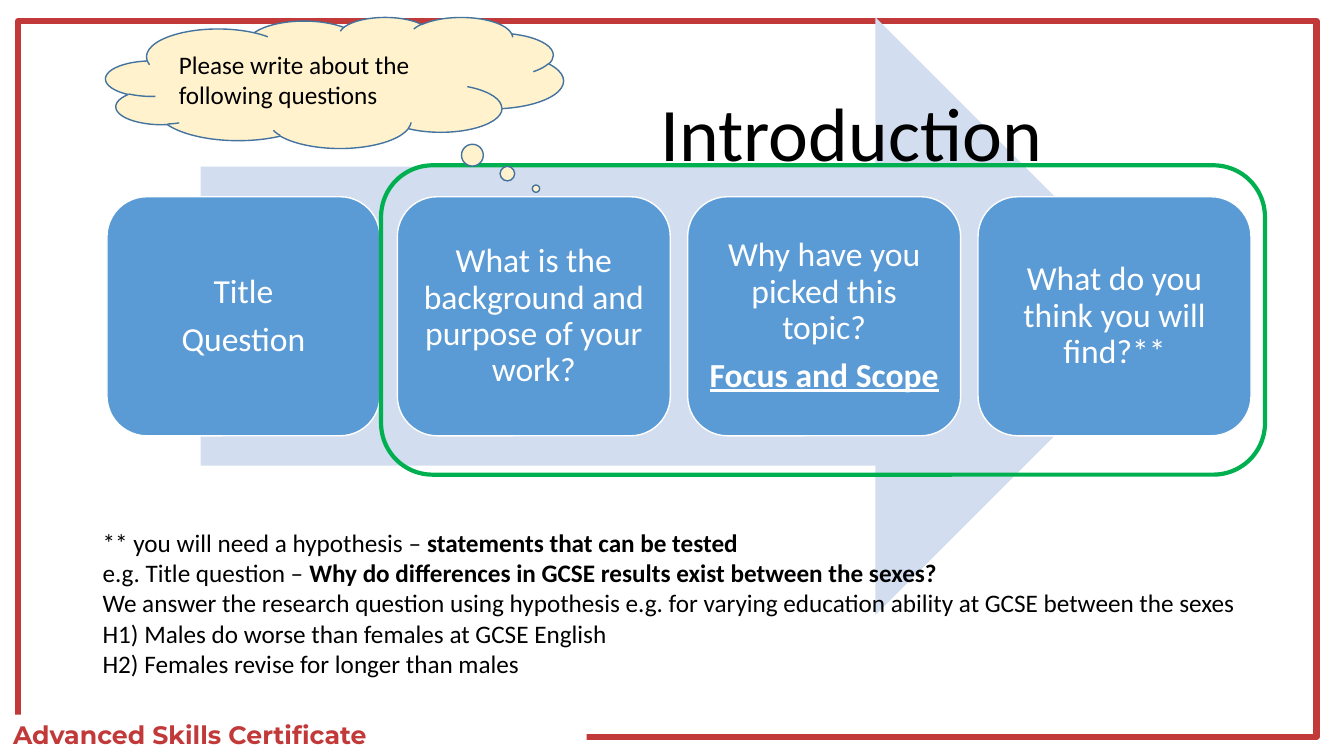
from pptx import Presentation
from pptx.dml.color import RGBColor
from pptx.enum.shapes import MSO_SHAPE as Shape
from pptx.enum.text import MSO_ANCHOR as Anchor, MSO_AUTO_SIZE as AutoSize, PP_ALIGN as Align
from pptx.util import Pt

COLORS = {
    "red": "C23939", "white": "FFFFFF", "black": "000000", "pale blue": "D2DEEF",
    "blue": "5B9BD5", "green": "00B050", "cream": "FFF2CC", "dark blue": "43739E",
}
CARD_LEFT, CARD_TOP, CARD_WIDTH, CARD_HEIGHT, CARD_PITCH = 76.4, 140.5, 195, 170.8, 207.4

# Each paragraph is a list of (text, style) spans; style may hold "b" and "u".
CARDS = [
    [[("Title", "")], [("Question", "")]],
    [[("What is the background and purpose of your work?", "")]],
    [[("Why have you picked this topic?", "")], [("Focus and Scope", "bu")]],
    [[("What do you think you will find?**", "")]],
]
NOTES = [
    [("** you will need a hypothesis – ", ""), ("statements that can be tested", "b")],
    [("e.g. Title question – ", ""),
     ("Why do differences in GCSE results exist between the sexes?", "b")],
    [("We answer the research question using hypothesis e.g. for varying education "
      "ability at GCSE between the sexes", "")],
    [("H1) Males do worse than females at GCSE English", "")],
    [("H2) Females revise for longer than males", "")],
]


def rgb(name):
    return RGBColor.from_string(COLORS[name])


def add_figure(page, kind, area, fill=None, line=None, weight=1):
    figure = page.shapes.add_shape(kind, *map(Pt, area))
    figure.shadow.inherit = False
    if fill:
        figure.fill.solid()
        figure.fill.fore_color.rgb = rgb(fill)
    else:
        figure.fill.background()
    if line:
        figure.line.color.rgb = rgb(line)
        figure.line.width = Pt(weight)
    else:
        figure.line.fill.background()
    return figure


def write(box, paragraphs, size, color="black", font="Calibri",
          align=Align.LEFT, anchor=Anchor.TOP):
    """Fill a shape's text frame and return its paragraphs."""
    frame = box.text_frame
    frame.word_wrap = True
    frame.vertical_anchor = anchor
    for index, spans in enumerate(paragraphs):
        para = frame.add_paragraph() if index else frame.paragraphs[0]
        para.alignment = align
        para.font.name = font
        para.font.size = Pt(size)
        para.font.color.rgb = rgb(color)
        for text, style in spans:
            span = para.add_run()
            span.text = text
            if "b" in style:
                span.font.bold = True
            if "u" in style:
                span.font.underline = True
    return frame.paragraphs


def add_card(page, column, paragraphs):
    area = (CARD_LEFT + column * CARD_PITCH, CARD_TOP, CARD_WIDTH, CARD_HEIGHT)
    card = add_figure(page, Shape.ROUNDED_RECTANGLE, area, "blue", "white")
    card.text_frame.margin_top = card.text_frame.margin_bottom = Pt(7.2)
    for para in write(card, paragraphs, 24, "white", align=Align.CENTER, anchor=Anchor.MIDDLE):
        para.line_spacing = 0.9
        para.space_after = Pt(8.4)


def place_title(page, text, area):
    """Set the title placeholder and raise it above the shapes drawn so far."""
    title = page.shapes.title
    title.left, title.top, title.width, title.height = map(Pt, area)
    write(title, [[(text, "")]], 54, align=Align.CENTER)
    title.text_frame.word_wrap = False
    title.text_frame.auto_size = AutoSize.SHAPE_TO_FIT_TEXT
    page.shapes.element.append(title.element)


def add_notes(page, paragraphs, area):
    box = page.shapes.add_textbox(*map(Pt, area))
    write(box, paragraphs, 18)
    box.text_frame.auto_size = AutoSize.SHAPE_TO_FIT_TEXT


def main():
    deck = Presentation()
    deck.slide_width, deck.slide_height = Pt(960), Pt(540)
    page = deck.slides.add_slide(deck.slide_layouts[5])

    add_figure(page, Shape.RECTANGLE, (13, 15.1, 927.4, 511.2), line="red", weight=4.5)
    footer = add_figure(page, Shape.RECTANGLE, (2.2, 510.5, 416.9, 29), "white")
    write(footer, [[("Advanced Skills Certificate", "b")]], 18, "red", "Montserrat")

    add_figure(page, Shape.RIGHT_ARROW, (143.3, 12.3, 695.5, 427), "pale blue")
    for column, paragraphs in enumerate(CARDS):
        add_card(page, column, paragraphs)
    add_figure(page, Shape.ROUNDED_RECTANGLE, (272.2, 118.1, 631.4, 221),
               line="green", weight=3)

    place_title(page, "Introduction", (463, 57.6, 290.2, 72.7))
    add_notes(page, NOTES, (66.2, 373, 851.8, 116.6))

    cloud = add_figure(page, Shape.CLOUD_CALLOUT, (75.6, 12.2, 326.9, 93.6),
                       "cream", "dark blue")
    cloud.adjustments[0], cloud.adjustments[1] = 0.44, 0.81
    write(cloud, [[("Please write about the following questions", "")]], 18,
          anchor=Anchor.MIDDLE)

    deck.save("out.pptx")


if __name__ == "__main__":
    main()
